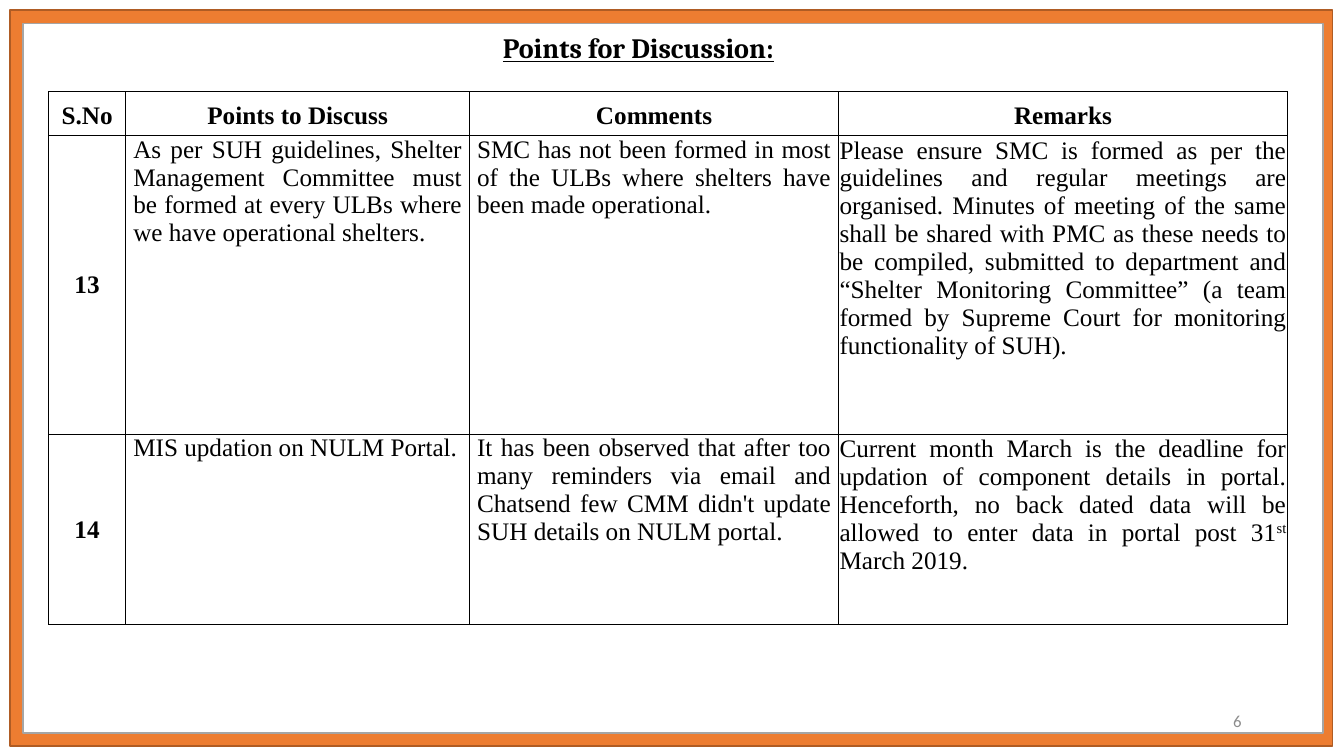
import pptx
import pptx.dml.color
import pptx.enum.shapes
import pptx.enum.text
import pptx.oxml
import pptx.oxml.ns
import pptx.util

Pt = pptx.util.Pt
RGBColor = pptx.dml.color.RGBColor
PP_ALIGN = pptx.enum.text.PP_ALIGN
MSO_ANCHOR = pptx.enum.text.MSO_ANCHOR

TITLE = "Points for Discussion:"
PAGE_NUMBER = "6"
HEADINGS = ["S.No", "Points to Discuss", "Comments", "Remarks"]
# Each cell is a list of text pieces; every second piece is superscript.
POINTS = [
    [
        ["13"],
        ["As per SUH guidelines, Shelter Management Committee must be formed at "
         "every ULBs where we have operational shelters."],
        ["SMC has not been formed in most of the ULBs where shelters have been "
         "made operational."],
        ["Please ensure SMC is formed as per the guidelines and regular meetings "
         "are organised. Minutes of meeting of the same shall be shared with PMC "
         "as these needs to be compiled, submitted to department and “Shelter "
         "Monitoring Committee” (a team formed by Supreme Court for monitoring "
         "functionality of SUH)."],
    ],
    [
        ["14"],
        ["MIS updation on NULM Portal."],
        ["It has been observed that after too many reminders via email and "
         "Chatsend few CMM didn't update SUH details on NULM portal."],
        ["Current month March is the deadline for updation of component details "
         "in portal. Henceforth, no back dated data will be allowed to enter data "
         "in portal post 31", "st", " March 2019."],
    ],
]

BLACK = RGBColor(0x00, 0x00, 0x00)
WHITE = RGBColor(0xFF, 0xFF, 0xFF)
ORANGE = RGBColor(0xED, 0x7D, 0x31)
DARK_ORANGE = RGBColor(0xAF, 0x5C, 0x24)
GREY = RGBColor(0xA5, 0xA5, 0xA5)
NUMBER_GREY = RGBColor(0x8C, 0x8C, 0x8C)

SLIDE_SIZE = (960, 540)
FRAMES = [((7.2, 7.2, 944.8, 525.6), ORANGE, DARK_ORANGE),
          ((16.4, 16.6, 928.6, 506.9), WHITE, GREY)]
TITLE_BOX = (32.4, 26.6, 847.4, 17.3)
NUMBER_BOX = (678, 500.5, 216, 28.8)
TABLE_CORNER = (34.6, 65.3)
COLUMN_WIDTHS = [55.2, 245.6, 263.6, 320.6]
ROW_HEIGHTS = [31.6, 213.2, 136]
BORDER_WIDTH = 0.5
HEADING_INSETS = (4.3, 0, 4.3, 0)
TIGHT_INSETS = (0.7, 0.7, 0.7, 0)
BODY_INSETS = (5.4, 0, 5.4, 0)


def points(lengths):
    return [Pt(length) for length in lengths]


def style_font(font, name, size, color=BLACK, bold=False):
    font.name, font.size, font.bold = name, Pt(size), bold
    font.color.rgb = color


def add_frame(slide, box, fill, line):
    frame = slide.shapes.add_shape(
        pptx.enum.shapes.MSO_SHAPE.RECTANGLE, *points(box))
    frame.shadow.inherit = False
    frame.fill.solid()
    frame.fill.fore_color.rgb = fill
    frame.line.color.rgb = line
    frame.line.width = Pt(1)


def add_borders(cell):
    properties = cell._tc.get_or_add_tcPr()
    for position, side in enumerate(("lnL", "lnR", "lnT", "lnB")):
        properties.insert(position, pptx.oxml.parse_xml(
            f'<a:{side} {pptx.oxml.ns.nsdecls("a")} w="{Pt(BORDER_WIDTH)}">'
            f'<a:solidFill><a:srgbClr val="{BLACK}"/></a:solidFill></a:{side}>'))


def fill_cell(cell, pieces, insets, align, anchor, bold, spacing):
    (cell.margin_left, cell.margin_top,
     cell.margin_right, cell.margin_bottom) = points(insets)
    cell.vertical_anchor = anchor
    cell.fill.background()
    add_borders(cell)
    paragraph = cell.text_frame.paragraphs[0]
    paragraph.alignment = align
    paragraph.line_spacing = spacing
    style_font(paragraph.font, "Times New Roman", 18, bold=bold)
    for index, piece in enumerate(pieces):
        run = paragraph.add_run()
        run.text = piece
        if index % 2:
            run.font._element.set("baseline", "30000")


def add_points_table(slide):
    rows = [[[heading] for heading in HEADINGS]] + POINTS
    table = slide.shapes.add_table(
        len(rows), len(HEADINGS),
        *points((*TABLE_CORNER, sum(COLUMN_WIDTHS), sum(ROW_HEIGHTS)))).table
    for column, width in zip(table.columns, COLUMN_WIDTHS):
        column.width = Pt(width)
    for row, height in zip(table.rows, ROW_HEIGHTS):
        row.height = Pt(height)
    last = len(HEADINGS) - 1
    for r, row in enumerate(rows):
        for c, pieces in enumerate(row):
            heading = r == 0
            label = heading or c == 0
            if heading:
                insets = HEADING_INSETS
            else:
                insets = TIGHT_INSETS if c in (0, last) else BODY_INSETS
            fill_cell(table.cell(r, c), pieces, insets,
                      PP_ALIGN.CENTER if label else PP_ALIGN.JUSTIFY,
                      MSO_ANCHOR.MIDDLE if label else MSO_ANCHOR.TOP,
                      label, 1.15 if heading else 1.0)


def place_title(slide):
    """Fill the title placeholder and bring it in front of the frames."""
    title = slide.shapes.title
    title.left, title.top, title.width, title.height = points(TITLE_BOX)
    title.text = TITLE
    frame = title.text_frame
    frame.auto_size = pptx.enum.text.MSO_AUTO_SIZE.NONE
    frame.vertical_anchor = MSO_ANCHOR.MIDDLE
    frame.margin_top = frame.margin_bottom = 0
    paragraph = frame.paragraphs[0]
    paragraph.alignment = PP_ALIGN.CENTER
    paragraph.line_spacing = 0.9
    style_font(paragraph.font, "Cambria", 20, bold=True)
    paragraph.font.underline = True
    slide.shapes._spTree.append(title._element)


def add_page_number(slide):
    frame = slide.shapes.add_textbox(*points(NUMBER_BOX)).text_frame
    frame.word_wrap = True
    frame.vertical_anchor = MSO_ANCHOR.MIDDLE
    paragraph = frame.paragraphs[0]
    paragraph.text = PAGE_NUMBER
    paragraph.alignment = PP_ALIGN.RIGHT
    style_font(paragraph.font, "Calibri", 12, NUMBER_GREY)


def main():
    deck = pptx.Presentation()
    deck.slide_width, deck.slide_height = points(SLIDE_SIZE)
    slide = deck.slides.add_slide(deck.slide_layouts.get_by_name("Title Only"))
    for frame in FRAMES:
        add_frame(slide, *frame)
    add_page_number(slide)
    place_title(slide)
    add_points_table(slide)
    deck.save("out.pptx")


if __name__ == "__main__":
    main()
